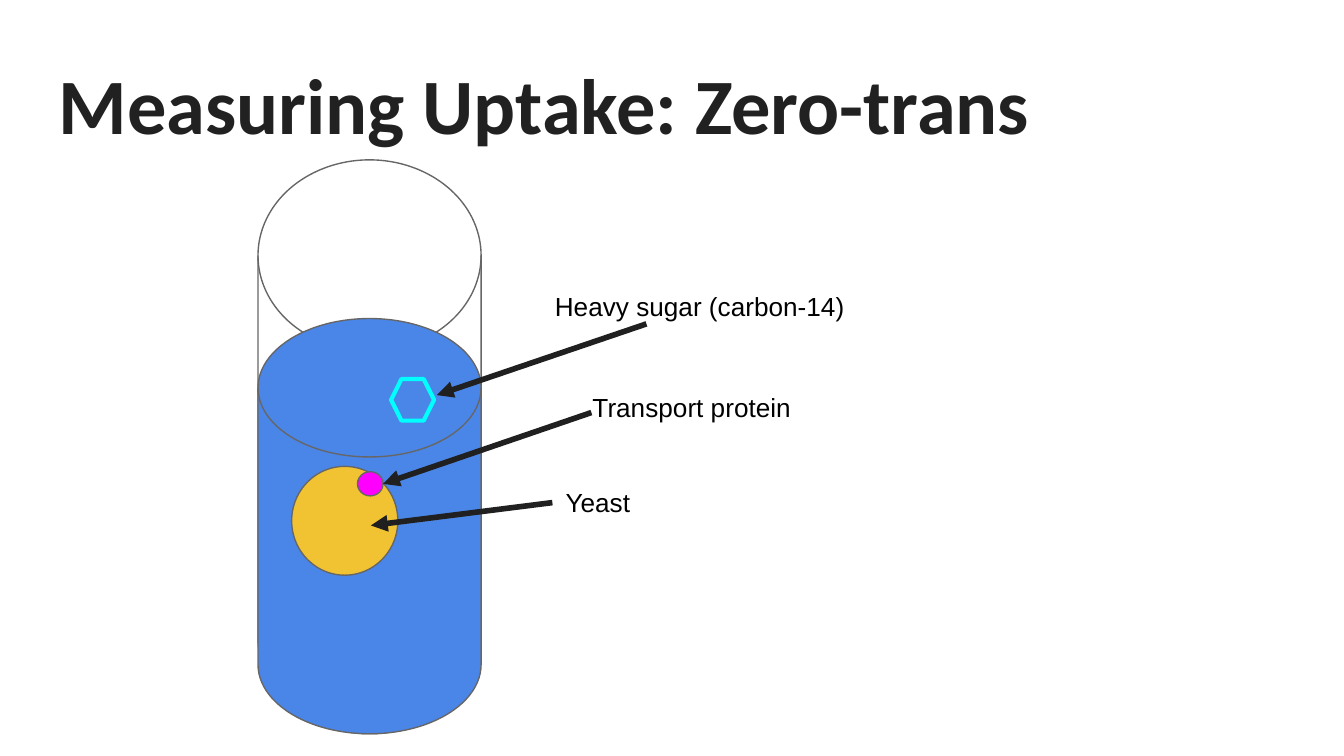
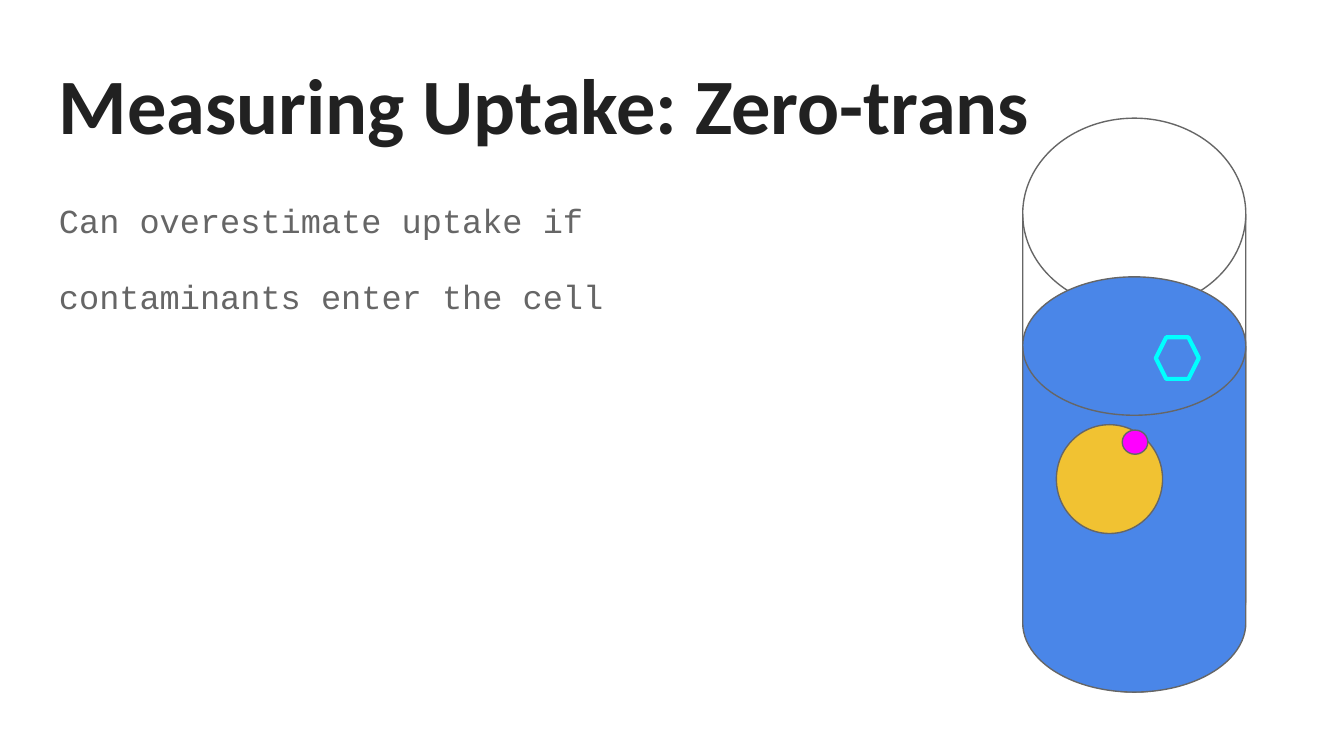
"""Builds two slides on measuring sugar uptake with the zero-trans method."""
from lxml import etree
from pptx import Presentation
from pptx.dml.color import RGBColor
from pptx.enum.shapes import MSO_CONNECTOR, MSO_SHAPE
from pptx.enum.text import MSO_ANCHOR
from pptx.oxml.ns import qn
from pptx.util import Inches, Pt

DISK = MSO_SHAPE.FLOWCHART_MAGNETIC_DISK
OVAL = MSO_SHAPE.OVAL
HEXAGON = MSO_SHAPE.HEXAGON
STRAIGHT = MSO_CONNECTOR.STRAIGHT
TOP = MSO_ANCHOR.TOP

BLACK = RGBColor(0x00, 0x00, 0x00)
INK = RGBColor(0x21, 0x21, 0x21)
ARROW = RGBColor(0x20, 0x20, 0x20)
GREY = RGBColor(0x66, 0x66, 0x66)
BLUE = RGBColor(0x4A, 0x86, 0xE8)
YELLOW = RGBColor(0xF1, 0xC2, 0x32)
MAGENTA = RGBColor(0xFF, 0x00, 0xFF)
CYAN = RGBColor(0x00, 0xFF, 0xFF)

TITLE = "Measuring Uptake: Zero-trans"
TITLE_BOX = (0.34, 0.32, 9.32, 0.88)
BODY = ["Can overestimate uptake if", "contaminants enter the cell"]
BODY_BOX = (0.34, 1.34, 9.32, 3.65)

TUBE_PARTS = [
    (DISK, (0, 0, 1.66, 4.27), None, GREY, 0.75),
    (DISK, (0, 1.18, 1.66, 3.09), BLUE, GREY, 0.75),
    (HEXAGON, (0.99, 1.63, 0.32, 0.31), None, CYAN, 2.25),
    (OVAL, (0.25, 2.28, 0.79, 0.81), YELLOW, GREY, 0.75),
    (OVAL, (0.74, 2.32, 0.19, 0.18), MAGENTA, GREY, 0.75),
]
LABELS = [
    ("Yeast", (4.11, 3.57, 1.62, 0.34), (4.11, 3.74), (2.76, 3.91)),
    ("Transport protein", (4.31, 2.86, 2.09, 0.34), (4.4, 3.07), (2.85, 3.6)),
    ("Heavy sugar (carbon-14)", (4.03, 2.11, 2.58, 0.34), (4.81, 2.41), (3.25, 2.94)),
]


def inches(values):
    return [Inches(value) for value in values]


def add_text(slide, lines, box, *, font, size, color, bold=False,
             inset=0.1, line_spacing=None, space_after=0):
    frame = slide.shapes.add_textbox(*inches(box)).text_frame
    frame.word_wrap = True
    frame.vertical_anchor = TOP
    frame.margin_top = frame.margin_bottom = Inches(inset)
    for index, line in enumerate(lines):
        paragraph = frame.add_paragraph() if index else frame.paragraphs[0]
        paragraph.line_spacing = line_spacing
        paragraph.space_after = Pt(space_after)
        run = paragraph.add_run()
        run.text = line
        run.font.name = font
        run.font.size = Pt(size)
        run.font.bold = bold
        run.font.color.rgb = color


def add_tube(slide, tube_left, tube_top):
    for preset, (left, top, width, height), fill, line, line_width in TUBE_PARTS:
        box = inches((tube_left + left, tube_top + top, width, height))
        shape = slide.shapes.add_shape(preset, *box)
        shape.shadow.inherit = False
        if fill is None:
            shape.fill.background()
        else:
            shape.fill.solid()
            shape.fill.fore_color.rgb = fill
        shape.line.color.rgb = line
        shape.line.width = Pt(line_width)


def add_arrow(slide, start, end):
    connector = slide.shapes.add_connector(STRAIGHT, *inches(start + end))
    connector.line.color.rgb = ARROW
    connector.line.width = Pt(3)
    properties = connector.element.spPr
    etree.SubElement(properties.find(qn("a:ln")), qn("a:tailEnd"), type="triangle")
    etree.SubElement(properties, qn("a:effectLst"))


def add_slide(presentation, tube_left, tube_top):
    slide = presentation.slides.add_slide(presentation.slide_layouts[6])
    add_tube(slide, tube_left, tube_top)
    add_text(slide, [TITLE], TITLE_BOX, font="Calibri", size=42, color=INK, bold=True)
    return slide


def main():
    presentation = Presentation()
    presentation.slide_width = Inches(10)
    presentation.slide_height = presentation.slide_width * 9 // 16

    labelled = add_slide(presentation, 1.92, 1.19)
    for label, box, start, end in LABELS:
        add_text(labelled, [label], box, font="Arial", size=14, color=BLACK, inset=0.05)
        add_arrow(labelled, start, end)

    caveat = add_slide(presentation, 7.61, 0.88)
    add_text(caveat, BODY, BODY_BOX, font="Courier New", size=18, color=GREY,
             line_spacing=1.15, space_after=16)

    presentation.save("out.pptx")


if __name__ == "__main__":
    main()
